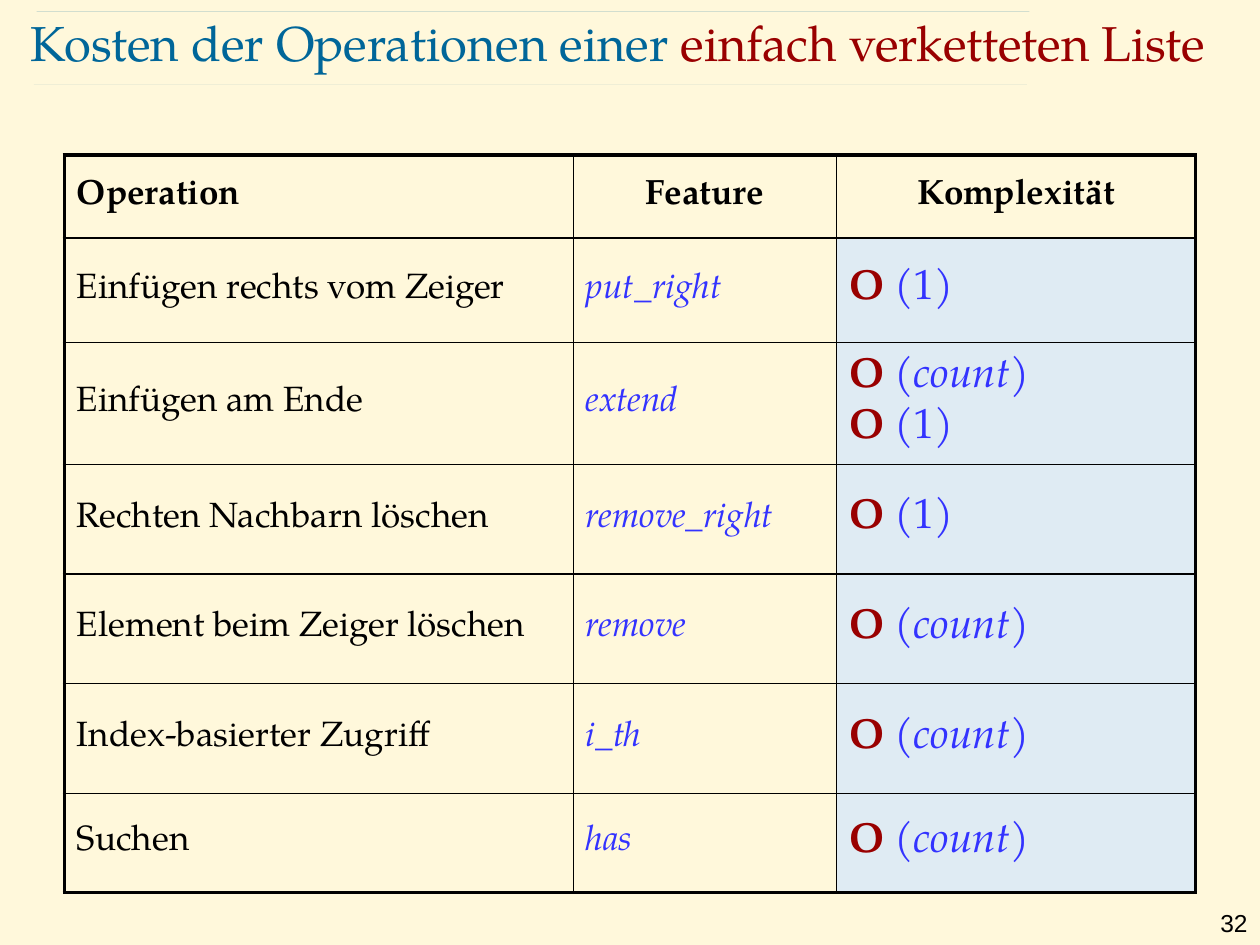
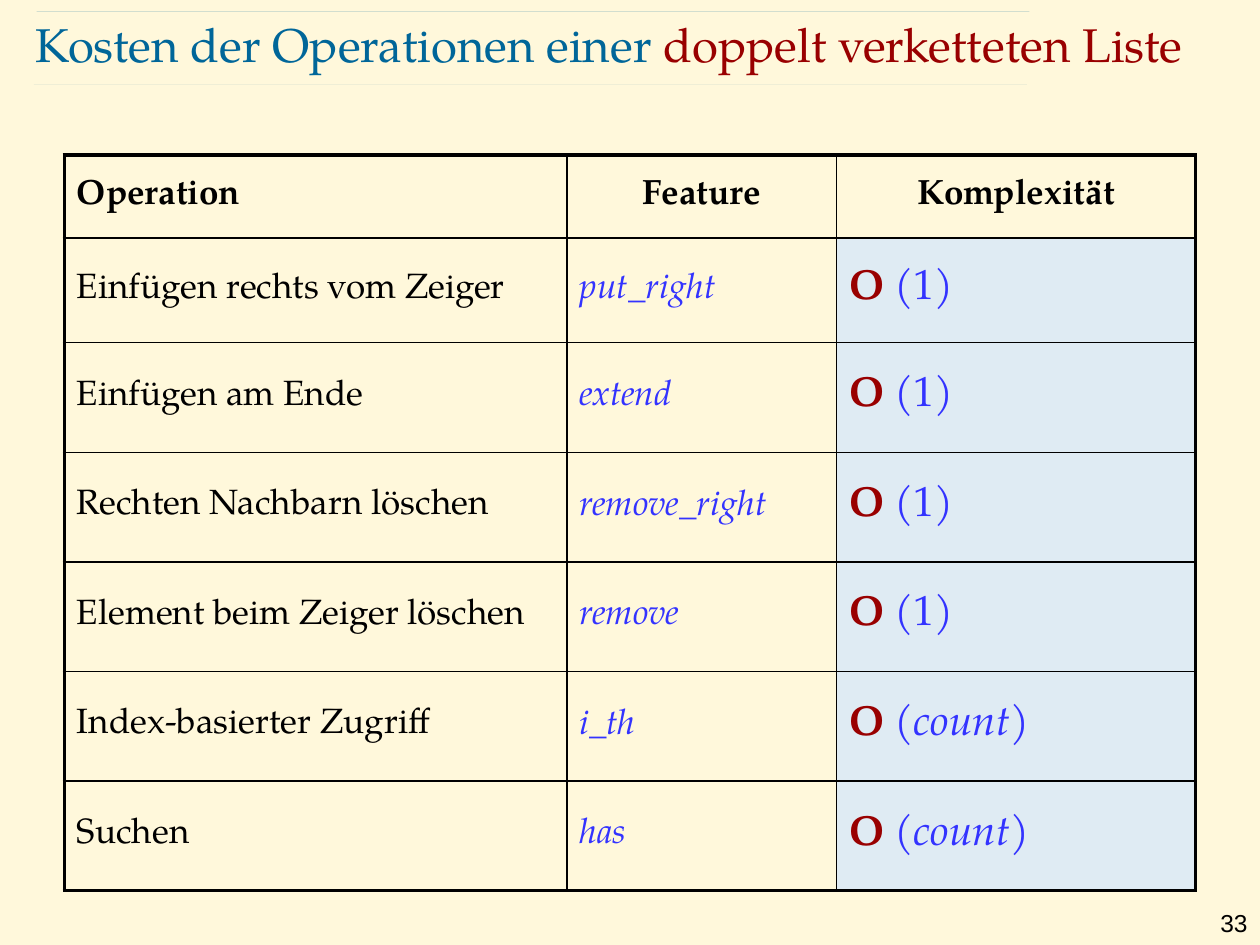
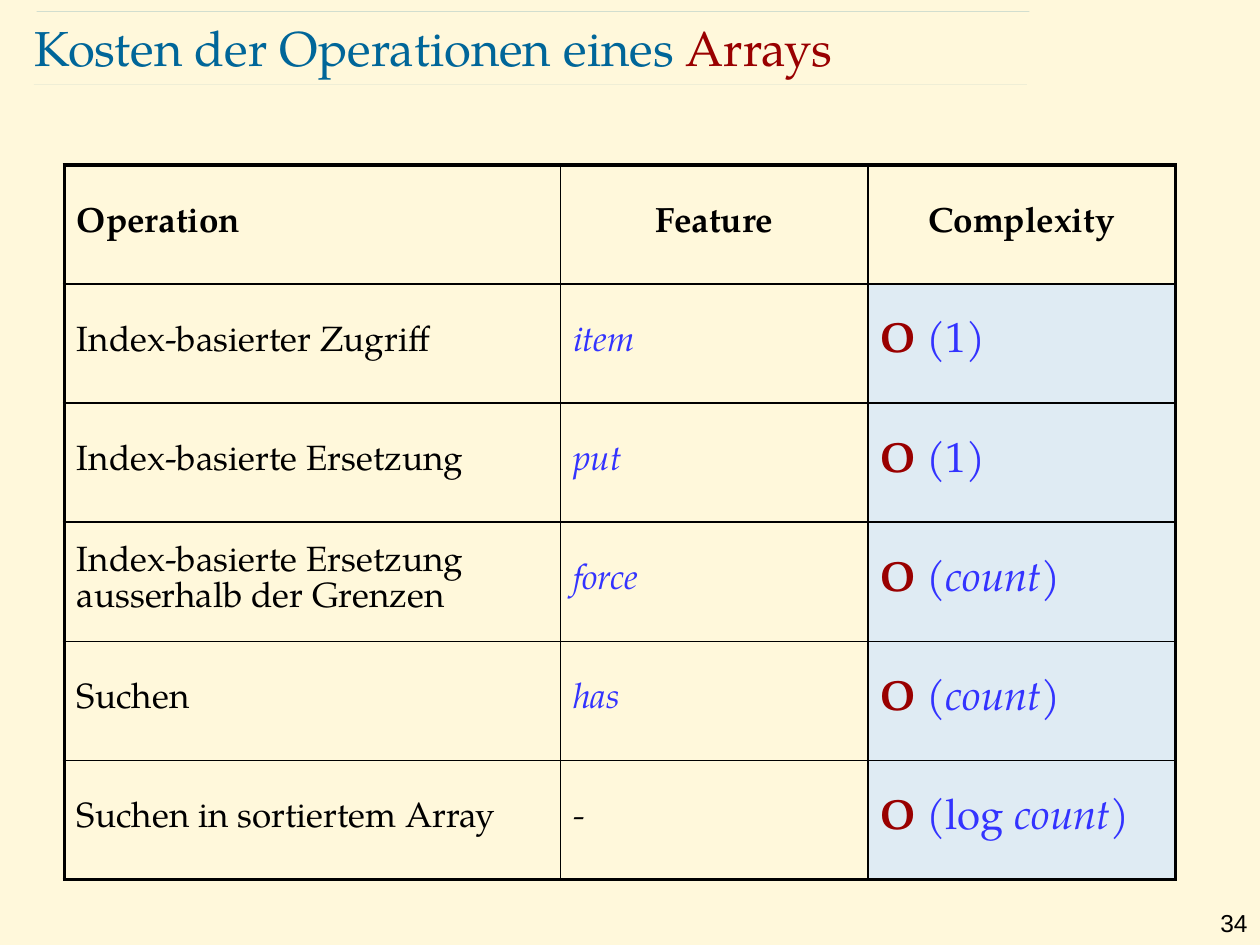
from lxml import etree
from pptx import Presentation
from pptx.dml.color import RGBColor
from pptx.enum.shapes import MSO_CONNECTOR
from pptx.enum.text import MSO_ANCHOR, MSO_AUTO_SIZE, PP_ALIGN
from pptx.oxml.ns import qn
from pptx.util import Inches, Pt

STRAIGHT = MSO_CONNECTOR.STRAIGHT
MIDDLE = MSO_ANCHOR.MIDDLE
NO_AUTOFIT = MSO_AUTO_SIZE.NONE
LEFT, CENTER, RIGHT = PP_ALIGN.LEFT, PP_ALIGN.CENTER, PP_ALIGN.RIGHT

# Shared look
SERIF, SANS = "TeX Gyre Pagella", "Arial"
CREAM, TEAL, RED = "FFF8DB", "006699", "990000"
BLACK, BLUE, PALE = "000000", "3333FF", "DFEBF3"
THICK, THIN = 2.25, 1
TABLE_LEFT = 0.51
RULES = [(0.27, 0.67), (0.29, 0.09)]
RULE_WIDTH = 7.88

# Content: complexities are lists with one entry per line
CONST, LINEAR, LOG = "(1)", "(count)", "(log count)"
SLIDES = [
    {
        "number": 32,
        "title": ("Kosten der Operationen einer ", "einfach verketteten Liste"),
        "title_box": (0.24, 0.09, 9.45, 0.48), "title_size": 28,
        "top": 1.23, "columns": [4.04, 2.09, 2.85],
        "heights": [0.66, 0.83] + [0.87] * 4 + [0.79],
        "header": ["Operation", "Feature", "Komplexität"],
        "rows": [
            ("Einfügen rechts vom Zeiger", "put_right", [CONST]),
            ("Einfügen am Ende", "extend", [LINEAR, CONST]),
            ("Rechten Nachbarn löschen", "remove_right", [CONST]),
            ("Element beim Zeiger löschen", "remove", [LINEAR]),
            ("Index-basierter Zugriff", "i_th", [LINEAR]),
            ("Suchen", "has", [LINEAR]),
        ],
    },
    {
        "number": 33,
        "title": ("Kosten der Operationen einer ", "doppelt verketteten Liste"),
        "title_box": (0.28, 0.11, 9.33, 0.48), "title_size": 27,
        "top": 1.23, "columns": [3.99, 2.14, 2.85],
        "heights": [0.66, 0.83] + [0.87] * 5,
        "header": ["Operation", "Feature", "Komplexität"],
        "rows": [
            ("Einfügen rechts vom Zeiger", "put_right", [CONST]),
            ("Einfügen am Ende", "extend", [CONST]),
            ("Rechten Nachbarn löschen", "remove_right", [CONST]),
            ("Element beim Zeiger löschen", "remove", [CONST]),
            ("Index-basierter Zugriff", "i_th", [LINEAR]),
            ("Suchen", "has", [LINEAR]),
        ],
    },
    {
        "number": 34,
        "title": ("Kosten der Operationen eines ", "Arrays"),
        "title_box": (0.27, 0.13, 8.69, 0.48), "title_size": 28,
        "top": 1.31, "columns": [3.94, 2.44, 2.44],
        "heights": [0.945] * 6,
        "header": ["Operation", "Feature", "Complexity"],
        "rows": [
            ("Index-basierter Zugriff", "item", [CONST]),
            ("Index-basierte Ersetzung", "put", [CONST]),
            ("Index-basierte Ersetzung ausserhalb der Grenzen", "force", [LINEAR]),
            ("Suchen", "has", [LINEAR]),
            ("Suchen in sortiertem Array", "-", [LOG]),
        ],
    },
]


def rgb(color):
    return RGBColor.from_string(color)


def write(p, runs, size, font=SERIF, align=LEFT):
    """Fill a paragraph with (text, colour, bold, italic) runs."""
    p.alignment = align
    p.font.name, p.font.size = font, Pt(size)
    for text, color, bold, italic in runs:
        r = p.add_run()
        r.text = text
        r.font.color.rgb = rgb(color)
        r.font.bold, r.font.italic = bold, italic


def add_rule(s, x, y):
    line = s.shapes.add_connector(STRAIGHT, Inches(x), Inches(y),
                                  Inches(x + RULE_WIDTH), Inches(y))
    line.line.width = Pt(0.1)
    line.line.color.rgb = rgb(TEAL)
    color = line.line._ln.find(".//" + qn("a:srgbClr"))
    etree.SubElement(color, qn("a:alpha"), val="49000")
    etree.SubElement(line._element.spPr, qn("a:effectLst"))


def add_frame(s, spec_):
    """Title, faint rules and page number."""
    for x, y in RULES:
        add_rule(s, x, y)
    box = s.shapes.add_textbox(*map(Inches, (9.45, 7.16, 0.55, 0.24)))
    box.text_frame.word_wrap = True
    write(box.text_frame.paragraphs[0],
          [(str(spec_["number"]), BLACK, False, False)], 14, SANS, RIGHT)

    title = s.shapes.title
    title.left, title.top, title.width, title.height = map(Inches, spec_["title_box"])
    tf = title.text_frame
    tf.margin_left = tf.margin_top = tf.margin_right = tf.margin_bottom = 0
    tf.vertical_anchor, tf.auto_size, tf.word_wrap = MIDDLE, NO_AUTOFIT, True
    write(tf.paragraphs[0],
          [(text, color, False, False) for text, color in zip(spec_["title"], (TEAL, RED))],
          spec_["title_size"])


def set_borders(cell, widths):
    tcPr = cell._tc.get_or_add_tcPr()
    for side, width in zip("LRTB", widths):
        ln = etree.SubElement(tcPr, qn("a:ln" + side), w=str(Pt(width)))
        fill = etree.SubElement(ln, qn("a:solidFill"))
        etree.SubElement(fill, qn("a:srgbClr"), val=BLACK)


def complexity_runs(term):
    before, count, after = term.partition("count")
    parts = [("O", RED, True, False), (" " + before, BLUE, False, False),
             (count, BLUE, False, True), (after, BLUE, False, False)]
    return [part for part in parts if part[0]]


def fill_cell(cell, i, j, value):
    p = cell.text_frame.paragraphs[0]
    if i == 0:
        write(p, [(value, BLACK, True, False)], 20, align=CENTER if j else LEFT)
    elif j == 0:
        write(p, [(value, BLACK, False, False)], 20)
    elif j == 1:
        write(p, [(value, BLACK if value == "-" else BLUE, False, True)], 20)
    else:
        for n, term in enumerate(value):
            if n:
                p = cell.text_frame.add_paragraph()
                p.space_before = Pt(4.8)
            write(p, complexity_runs(term), 24)


def add_cost_table(s, spec_):
    grid = [spec_["header"]] + spec_["rows"]
    columns, heights = spec_["columns"], spec_["heights"]
    table = s.shapes.add_table(
        len(grid), len(columns), Inches(TABLE_LEFT), Inches(spec_["top"]),
        Inches(sum(columns)), Inches(sum(heights))).table
    table.first_row = table.horz_banding = False
    for column, width in zip(table.columns, columns):
        column.width = Inches(width)
    for row, height in zip(table.rows, heights):
        row.height = Inches(height)

    last_row, last_col = len(grid) - 1, len(columns) - 1
    for i, values in enumerate(grid):
        for j, value in enumerate(values):
            cell = table.cell(i, j)
            cell.vertical_anchor = MIDDLE
            outer = (j == 0, j == last_col, i == 0, i == last_row)
            set_borders(cell, [THICK if edge else THIN for edge in outer])
            if i and j == last_col:
                cell.fill.solid()
                cell.fill.fore_color.rgb = rgb(PALE)
            else:
                cell.fill.background()
            fill_cell(cell, i, j, value)


def main():
    prs = Presentation()
    prs.slide_width, prs.slide_height = Inches(10), Inches(7.5)
    background = prs.slide_master.background.fill
    background.solid()
    background.fore_color.rgb = rgb(CREAM)
    for spec_ in SLIDES:
        s = prs.slides.add_slide(prs.slide_layouts[5])
        add_frame(s, spec_)
        add_cost_table(s, spec_)
    prs.save("out.pptx")


if __name__ == "__main__":
    main()
